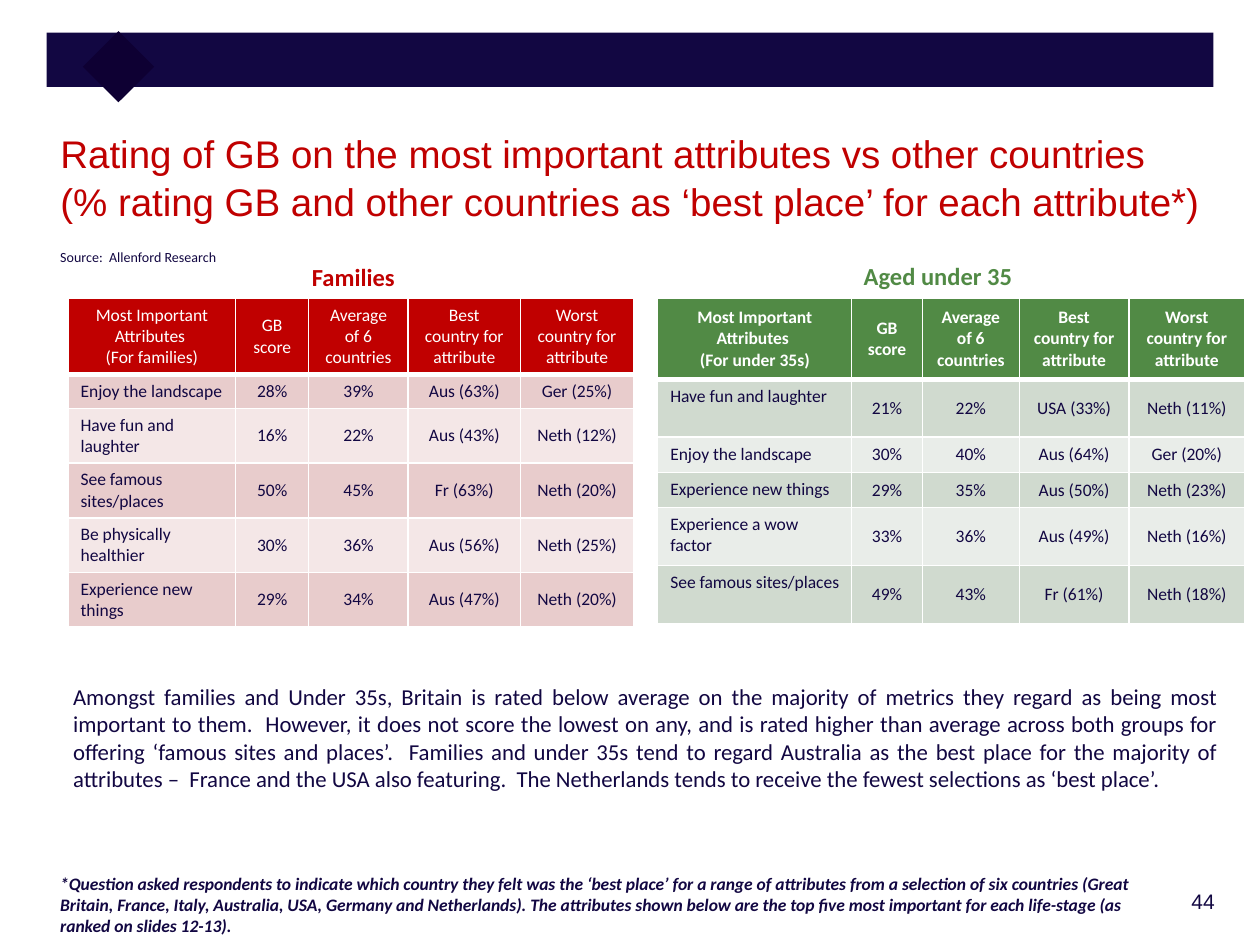
import pptx
import pptx.dml.color
import pptx.enum.shapes
import pptx.enum.text
import pptx.oxml
import pptx.util
from pptx.util import Inches

ALIGN = pptx.enum.text.PP_ALIGN
ANCHOR = pptx.enum.text.MSO_ANCHOR
SHAPE = pptx.enum.shapes.MSO_SHAPE
COLORS = {
    "navy": "120742", "diamond": "0E0033", "white": "FFFFFF",
    "red": "C00000", "red_dark": "E8CCCC", "red_light": "F4E7E7",
    "green": "518A45", "green_dark": "D0DACF", "green_light": "E9EDE9",
}


def write(frame, lines, color="navy", size=10, align=ALIGN.LEFT, name="Calibri", **styles):
    """Fill a text frame with one formatted paragraph per line."""
    frame.text = "\n".join(lines)
    for para in frame.paragraphs:
        para.alignment = align
        para.font.color.rgb = pptx.dml.color.RGBColor.from_string(COLORS[color])
        formats = {"name": name, "size": pptx.util.Pt(size), "bold": False, **styles}
        for key, value in formats.items():
            setattr(para.font, key, value)


def set_borders(cell, bottom):
    """Give a cell white 1 pt borders, with its own bottom width in points."""
    properties = cell._tc.get_or_add_tcPr()
    widths = {"lnL": 1, "lnR": 1, "lnT": 1, "lnB": bottom}
    for index, (tag, width) in enumerate(widths.items()):
        line = pptx.oxml.parse_xml(
            f'<a:{tag} xmlns:a="http://schemas.openxmlformats.org/drawingml/2006/main" '
            f'w="{pptx.util.Pt(width)}"><a:solidFill><a:srgbClr val="{COLORS["white"]}"/>'
            f'</a:solidFill></a:{tag}>')
        properties.insert(index, line)


deck = pptx.Presentation()
deck.slide_width, deck.slide_height = Inches(10), Inches(7.5)
page = deck.slides.add_slide(deck.slide_layouts[5])

# Banner
banner = [
    ((0.37, 0.26, 9.26, 0.43), "navy", 0),
    ((0.74, 0.33, 0.4, 0.4), "diamond", 45),
]
for place, color, rotation in banner:
    shape = page.shapes.add_shape(SHAPE.RECTANGLE, *map(Inches, place))
    shape.shadow.inherit = False
    shape.fill.solid()
    shape.fill.fore_color.rgb = pptx.dml.color.RGBColor.from_string(COLORS[color])
    shape.line.fill.background()
    shape.rotation = rotation

# Title
title = page.shapes.title
title.left, title.top, title.width, title.height = map(Inches, (0.38, 0.95, 9.34, 0.89))
title.text_frame.auto_size = pptx.enum.text.MSO_AUTO_SIZE.NONE
title.text_frame.vertical_anchor = ANCHOR.MIDDLE
write(title.text_frame, [
    "Rating of GB on the most important attributes vs other countries \v"
    "(% rating GB and other countries as ‘best place’ for each attribute*)"
], "red", 22, name="Arial")
title.text_frame.paragraphs[0].line_spacing = 1.06

# Text boxes
summary = (
    "Amongst families and Under 35s, Britain is rated below average on the majority of "
    "metrics they regard as being most important to them.  However, it does not score the "
    "lowest on any, and is rated higher than average across both groups for offering ‘famous "
    "sites and places’.  Families and under 35s tend to regard Australia as the best place "
    "for the majority of attributes –  France and the USA also featuring.  The Netherlands "
    "tends to receive the fewest selections as ‘best place’.")
footnote = (
    "*Question asked respondents to indicate which country they felt was the ‘best place’ for "
    "a range of attributes from a selection of six countries (Great Britain, France, Italy, "
    "Australia, USA, Germany and Netherlands). The attributes shown below are the top five "
    "most important for each life-stage (as ranked on slides 12-13).")
texts = [
    ((0.38, 1.92, 1.5, 0.24), "Source:  Allenford Research", {"size": 8}),
    ((2.34, 2.03, 0.93, 0.34), "Families",
     {"size": 14, "color": "red", "bold": True, "align": ALIGN.CENTER}),
    ((6.61, 2.02, 1.67, 0.34), "Aged under 35",
     {"size": 14, "color": "green", "bold": True, "align": ALIGN.CENTER}),
    ((0.54, 5.37, 9.21, 1.51), summary, {"size": 13, "align": ALIGN.JUSTIFY}),
    ((0.38, 6.88, 8.97, 0.61), footnote, {"bold": True, "italic": True}),
    ((8.53, 7, 1.21, 0.36), "44", {"size": 12, "name": "Arial", "align": ALIGN.RIGHT}),
]
for place, text, formats in texts:
    box = page.shapes.add_textbox(*map(Inches, place))
    box.text_frame.word_wrap = not text.startswith("Source")
    if text == summary:
        box.text_frame.margin_left = Inches(0.04)
    write(box.text_frame, [text], **formats)

# Tables
headings = ["GB score", "Average of 6 countries", "Best country for attribute",
            "Worst country for attribute"]
tables = [
    {
        "left": 0.54, "color": "red", "bold": False, "group": "(For families)",
        "columns": [1.33, 0.58, 0.79, 0.89, 0.9],
        "heights": [0.6, 0.27, 0.43, 0.43, 0.43, 0.43],
        "rows": [
            ["Enjoy the landscape", "28%", "39%", "Aus (63%)", "Ger (25%)"],
            ["Have fun and laughter", "16%", "22%", "Aus (43%)", "Neth (12%)"],
            ["See famous sites/places", "50%", "45%", "Fr (63%)", "Neth (20%)"],
            ["Be physically healthier", "30%", "36%", "Aus (56%)", "Neth (25%)"],
            ["Experience new things", "29%", "34%", "Aus (47%)", "Neth (20%)"],
        ],
    },
    {
        "left": 5.22, "color": "green", "bold": True, "group": "(For under 35s)",
        "columns": [1.54, 0.56, 0.77, 0.87, 0.92],
        "heights": [0.64, 0.46, 0.28, 0.28, 0.46, 0.46],
        "rows": [
            ["Have fun and laughter", "21%", "22%", "USA (33%)", "Neth (11%)"],
            ["Enjoy the landscape", "30%", "40%", "Aus (64%)", "Ger (20%)"],
            ["Experience new things", "29%", "35%", "Aus (50%)", "Neth (23%)"],
            ["Experience a wow factor", "33%", "36%", "Aus (49%)", "Neth (16%)"],
            ["See famous sites/places", "49%", "43%", "Fr (61%)", "Neth (18%)"],
        ],
    },
]
for ratings in tables:
    columns, heights = ratings["columns"], ratings["heights"]
    rows = [["Most Important Attributes \n" + ratings["group"], *headings], *ratings["rows"]]
    table = page.shapes.add_table(
        len(rows), len(columns), Inches(ratings["left"]), Inches(2.37),
        Inches(sum(columns)), Inches(sum(heights))).table
    for column, width in zip(table.columns, columns):
        column.width = Inches(width)
    for row, height in zip(table.rows, heights):
        row.height = Inches(height)
    for r, values in enumerate(rows):
        header = r == 0
        shade = "" if header else ("_light", "_dark")[r % 2]
        for c, value in enumerate(values):
            cell = table.cell(r, c)
            label = c == 0 and not header
            cell.vertical_anchor = ANCHOR.TOP if label else ANCHOR.MIDDLE
            cell.fill.solid()
            cell.fill.fore_color.rgb = pptx.dml.color.RGBColor.from_string(
                COLORS[ratings["color"] + shade])
            set_borders(cell, 3 if header else 1)
            write(cell.text_frame, value.split("\n"), "white" if header else "navy",
                  align=ALIGN.LEFT if label else ALIGN.CENTER,
                  bold=header and ratings["bold"])

deck.save("out.pptx")
